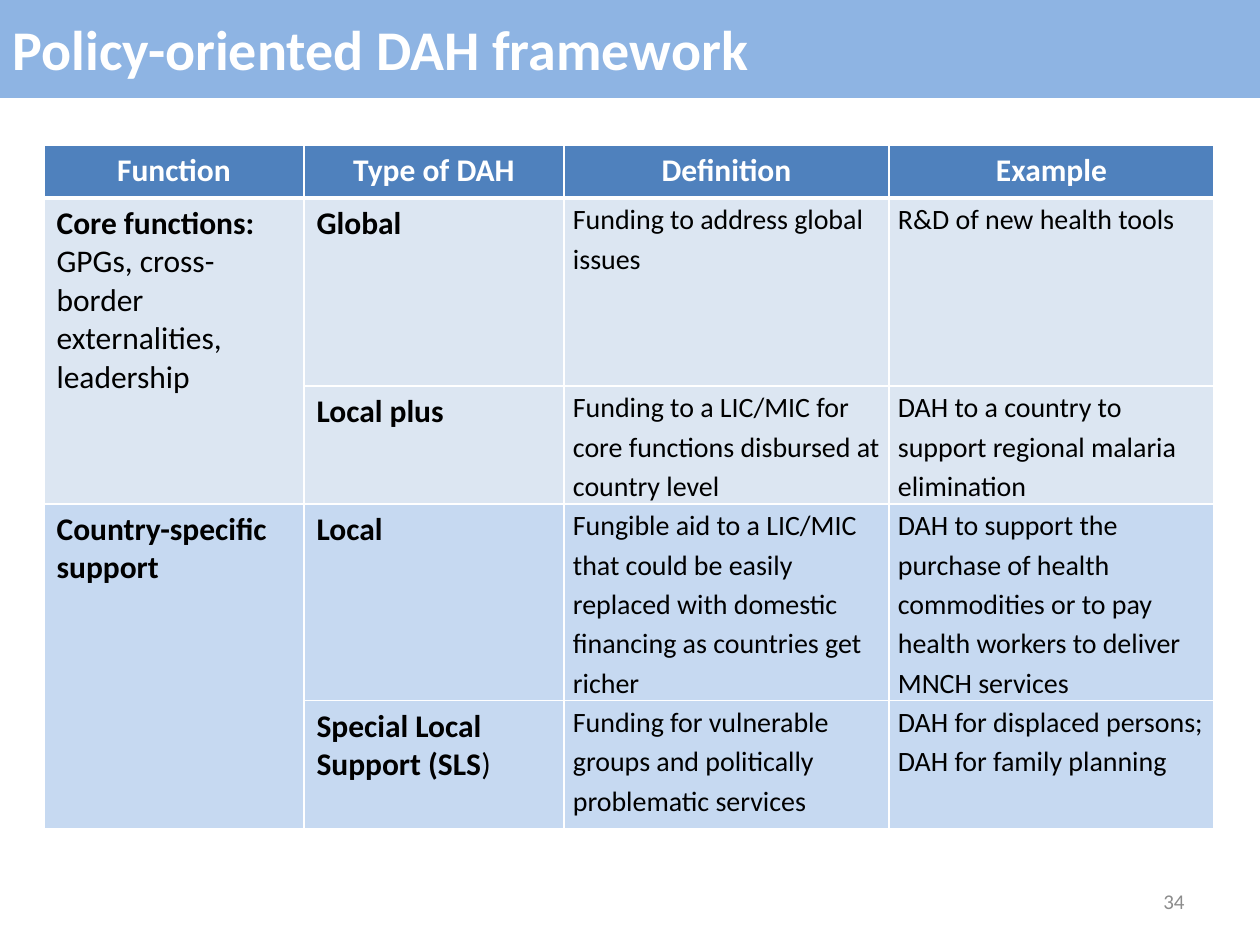
from lxml import etree
from pptx import Presentation
from pptx.dml.color import RGBColor
from pptx.enum.text import MSO_ANCHOR, MSO_AUTO_SIZE, PP_ALIGN
from pptx.oxml.ns import qn
from pptx.util import Emu, Pt

LEFT, CENTER, RIGHT = PP_ALIGN.LEFT, PP_ALIGN.CENTER, PP_ALIGN.RIGHT
MIDDLE = MSO_ANCHOR.MIDDLE
NO_AUTOFIT = MSO_AUTO_SIZE.NONE
PX = 914400 // 126
FONT = "Calibri"
TITLE_ONLY_LAYOUT = 5
COLORS = {
    "banner": "8EB4E3",
    "header": "4F81BD",
    "core": "DCE6F2",
    "country": "C6D9F1",
    "white": "FFFFFF",
    "black": "000000",
    "number": "8C8C8C",
}

COLUMN_WIDTHS = [260, 260, 325, 325]
ROW_HEIGHTS = [53, 188, 118, 196, 128]
HEADERS = ["Function", "Type of DAH", "Definition", "Example"]

# Each group: fill, function lines as (text, bold), and its rows;
# a row holds the type's runs as (text, bold), the definition and the example
GROUPS = [
    ("core",
     [("Core functions:", True),
      ("GPGs, cross-border externalities, leadership", False)],
     [([("Global", True)],
       "Funding to address global issues",
       "R&D of new health tools"),
      ([("Local plus", True)],
       "Funding to a LIC/MIC for core functions disbursed at country level",
       "DAH to a country to support regional malaria elimination")]),
    ("country",
     [("Country-specific support", True)],
     [([("Local", True)],
       "Fungible aid to a LIC/MIC that could be easily replaced with "
       "domestic financing as countries get richer",
       "DAH to support the purchase of health commodities or to pay "
       "health workers to deliver MNCH services"),
      ([("Special Local Support (SLS", True), (")", False)],
       "Funding for vulnerable groups and politically problematic services",
       "DAH for displaced persons; DAH for family planning")]),
]


def color(name):
    return RGBColor.from_string(COLORS[name])


def place(shape, box):
    shape.left, shape.top, shape.width, shape.height = [Emu(v * PX) for v in box]


def write(paragraph, runs, size, color_name, align=LEFT):
    paragraph.alignment = align
    for text, bold in runs:
        run = paragraph.add_run()
        run.text = text
        run.font.name = FONT
        run.font.size = Pt(size)
        run.font.bold = bold
        run.font.color.rgb = color(color_name)


def style_cell(cell, fill, bottom_width=1):
    cell.fill.solid()
    cell.fill.fore_color.rgb = color(fill)
    properties = cell._tc.get_or_add_tcPr()
    widths = {"lnL": 1, "lnR": 1, "lnT": 1, "lnB": bottom_width}
    for index, (side, width) in enumerate(widths.items()):
        line = etree.Element(qn(f"a:{side}"), w=str(Pt(width)))
        solid = etree.SubElement(line, qn("a:solidFill"))
        etree.SubElement(solid, qn("a:srgbClr"), val=COLORS["white"])
        properties.insert(index, line)


def write_detail(cell, text):
    cell.margin_left = cell.margin_right = Emu(9 * PX)
    cell.margin_top = cell.margin_bottom = 0
    paragraph = cell.text_frame.paragraphs[0]
    paragraph.line_spacing = 1.15
    write(paragraph, [(text, False)], 16, "black")


def add_title(slide, box):
    title = slide.shapes.title
    place(title, box)
    title.fill.solid()
    title.fill.fore_color.rgb = color("banner")
    frame = title.text_frame
    frame.auto_size = NO_AUTOFIT
    frame.vertical_anchor = MIDDLE
    write(frame.paragraphs[0], [("Policy-oriented DAH framework", True)], 32, "white")


def add_framework_table(slide, box):
    bounds = [Emu(value * PX) for value in box]
    table = slide.shapes.add_table(
        len(ROW_HEIGHTS), len(COLUMN_WIDTHS), *bounds).table
    for column, width in zip(table.columns, COLUMN_WIDTHS):
        column.width = Emu(width * PX)
    for row, height in zip(table.rows, ROW_HEIGHTS):
        row.height = Emu(height * PX)

    # Header row
    for column, header in enumerate(HEADERS):
        cell = table.cell(0, column)
        style_cell(cell, "header", bottom_width=3)
        write(cell.text_frame.paragraphs[0], [(header, True)], 18, "white", CENTER)

    # Function groups, each with one merged cell on the left
    first_row = 1
    for fill, function_lines, rows in GROUPS:
        for row, (type_runs, definition, example) in enumerate(rows, first_row):
            for column in range(len(COLUMN_WIDTHS)):
                style_cell(table.cell(row, column), fill)
            write(table.cell(row, 1).text_frame.paragraphs[0], type_runs, 18, "black")
            write_detail(table.cell(row, 2), definition)
            write_detail(table.cell(row, 3), example)
        function_cell = table.cell(first_row, 0)
        function_cell.merge(table.cell(first_row + len(rows) - 1, 0))
        frame = function_cell.text_frame
        for index, line in enumerate(function_lines):
            paragraph = frame.add_paragraph() if index else frame.paragraphs[0]
            write(paragraph, [line], 18, "black")
        first_row += len(rows)


def add_page_number(slide, box):
    bounds = [Emu(value * PX) for value in box]
    frame = slide.shapes.add_textbox(*bounds).text_frame
    frame.word_wrap = True
    frame.vertical_anchor = MIDDLE
    write(frame.paragraphs[0], [("34", False)], 12, "number", RIGHT)


def main():
    presentation = Presentation()
    presentation.slide_width = Emu(1260 * PX)
    presentation.slide_height = Emu(945 * PX)
    slide = presentation.slides.add_slide(
        presentation.slide_layouts[TITLE_ONLY_LAYOUT])
    add_title(slide, (0, -1, 1260, 99))
    add_framework_table(
        slide, (44, 145, sum(COLUMN_WIDTHS), sum(ROW_HEIGHTS)))
    add_page_number(slide, (903, 876, 294, 50))
    presentation.save("out.pptx")


if __name__ == "__main__":
    main()
